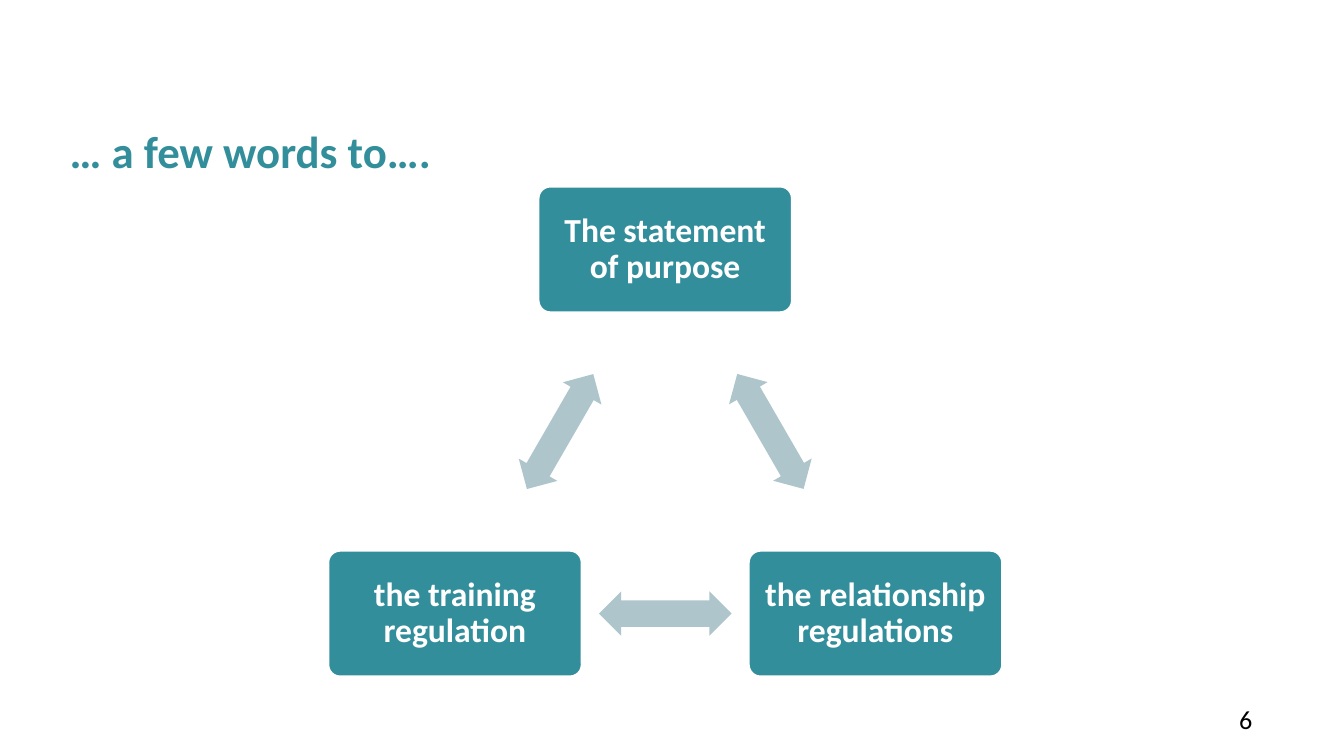
from math import atan2, cos, degrees, radians, sin

from pptx import Presentation
from pptx.dml.color import RGBColor
from pptx.enum.shapes import MSO_SHAPE as Kind
from pptx.enum.text import MSO_ANCHOR as Anchor, PP_ALIGN as Align
from pptx.util import Pt

SCALE = 5715
HUES = {"teal": "338E9C", "mist": "AEC6CB", "white": "FFFFFF", "black": "000000"}
MID = (792, 586)
REACH = 289
NODES = ["The statement of purpose", "the relationship regulations", "the training regulation"]


def px(size):
    """Turn px into EMU."""
    return round(size * SCALE)


def hue(name):
    """Look up a colour by name."""
    return RGBColor.from_string(HUES[name])


def write(shape, text, size, color, bold=False, align=Align.LEFT,
          anchor=Anchor.MIDDLE, inset=0, lead=None, wrap=True):
    """Fill a shape with one formatted paragraph."""
    frame = shape.text_frame
    frame.word_wrap = wrap
    frame.vertical_anchor = anchor
    frame.margin_left = frame.margin_right = px(inset)
    frame.margin_top = frame.margin_bottom = px(inset)
    para = frame.paragraphs[0]
    para.alignment = align
    para.line_spacing = lead
    run = para.add_run()
    run.text = text
    font = run.font
    font.name, font.size, font.bold = "Calibri", Pt(size), bold
    font.color.rgb = hue(color)


def add_form(slide, kind, mid, wide, high, color, adjust):
    """Add a flat filled shape centred on a point."""
    x, y = mid
    form = slide.shapes.add_shape(kind, px(x - wide / 2), px(y - high / 2), px(wide), px(high))
    form.shadow.inherit = False
    form.fill.solid()
    form.fill.fore_color.rgb = hue(color)
    form.line.fill.background()
    for i, value in enumerate(adjust):
        form.adjustments[i] = value
    return form


def add_node(slide, mid, text):
    """Add a labelled box with a white edge."""
    node = add_form(slide, Kind.ROUNDED_RECTANGLE, mid, 304, 152, "teal", [0.1])
    node.line.color.rgb = hue("white")
    node.line.width = Pt(2.08)
    write(node, text, 18, "white", True, Align.CENTER, inset=11, lead=0.9)


def add_arrow(slide, start, end):
    """Add a double arrow halfway between two points."""
    (x1, y1), (x2, y2) = start, end
    mid = ((x1 + x2) / 2, (y1 + y2) / 2)
    arrow = add_form(slide, Kind.LEFT_RIGHT_ARROW, mid, 158, 53, "mist", [0.6, 0.5])
    arrow.rotation = degrees(atan2(y2 - y1, x2 - x1)) % 360


def add_cycle(slide):
    """Place the nodes evenly on a circle and link neighbours."""
    turns = [radians(360 * i / len(NODES) - 90) for i in range(len(NODES))]
    spots = [(MID[0] + REACH * cos(t), MID[1] + REACH * sin(t)) for t in turns]
    for i, text in enumerate(NODES):
        add_node(slide, spots[i], text)
        add_arrow(slide, spots[i], spots[(i + 1) % len(spots)])


def add_title(slide, text):
    """Move and fill the title placeholder."""
    title = slide.shapes.title
    title.left, title.top, title.width, title.height = map(px, (83, 145, 1397, 109))
    write(title, text, 24, "teal", True, anchor=Anchor.TOP, lead=Pt(30), wrap=False)


def add_page(slide, text):
    """Add the page number."""
    box = slide.shapes.add_textbox(*map(px, (1323, 838, 168, 35)))
    write(box, text, 14, "black", align=Align.RIGHT)


def main():
    """Build and save the slide."""
    deck = Presentation()
    deck.slide_width, deck.slide_height = px(1600), px(900)
    slide = deck.slides.add_slide(deck.slide_layouts[5])
    add_title(slide, "… a few words to….")
    add_cycle(slide)
    add_page(slide, "6")
    deck.save("out.pptx")


if __name__ == "__main__":
    main()
